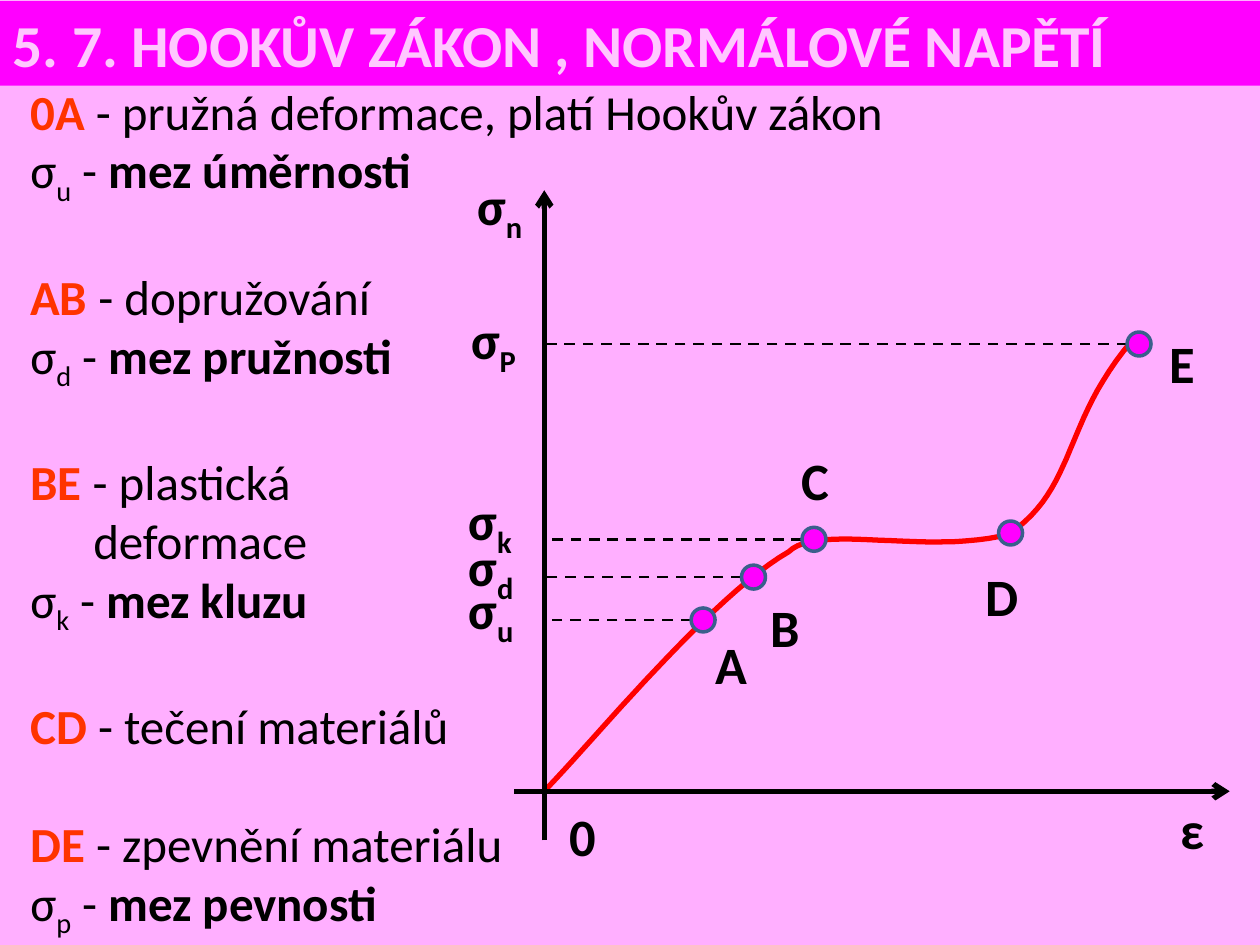
from dataclasses import dataclass

from lxml import etree
from pptx import Presentation
from pptx.dml.color import RGBColor
from pptx.enum.dml import MSO_LINE
from pptx.enum.shapes import MSO_CONNECTOR, MSO_SHAPE
from pptx.enum.text import MSO_ANCHOR, MSO_AUTO_SIZE, PP_ALIGN
from pptx.oxml.ns import qn
from pptx.util import Inches, Pt

STRAIGHT = MSO_CONNECTOR.STRAIGHT
OVAL = MSO_SHAPE.OVAL
DASH = MSO_LINE.DASH
LEFT = PP_ALIGN.LEFT
MIDDLE = MSO_ANCHOR.MIDDLE
NO_FIT = MSO_AUTO_SIZE.NONE


@dataclass(frozen=True)
class Theme:
    font: str = "Calibri"
    background: RGBColor = RGBColor(0xFF, 0xAF, 0xFF)
    accent: RGBColor = RGBColor(0xFF, 0x00, 0xFF)
    title: RGBColor = RGBColor(0xFF, 0xC8, 0xFF)
    key: RGBColor = RGBColor(0xFF, 0x33, 0x00)
    ink: RGBColor = RGBColor(0, 0, 0)
    curve: RGBColor = RGBColor(0xFF, 0, 0)
    outline: RGBColor = RGBColor(0x3A, 0x5F, 0x8C)
    title_size: int = 34
    body_size: int = 28
    label_size: int = 30


@dataclass(frozen=True)
class Phase:
    """One stretch of the curve, with the limit that ends it."""
    key: str
    lines: tuple
    sub: str = ""
    limit: str = ""


@dataclass(frozen=True)
class Label:
    x: float
    y: float
    w: float
    text: str
    sub: str = ""


@dataclass(frozen=True)
class Point:
    x: float
    y: float
    dashed: bool = True


THEME = Theme()
ORIGIN_X, ORIGIN_Y = 4.32, 6.28
MARKER = 0.19
LABEL_H = 0.61
UNITS = 1000  # freeform units per inch

PHASES = [
    Phase("0A", ("pružná deformace, platí Hookův zákon",), "u", "mez úměrnosti"),
    Phase("AB", ("dopružování",), "d", "mez pružnosti"),
    Phase("BE", ("plastická", "deformace"), "k", "mez kluzu"),
    Phase("CD", ("tečení materiálů",)),
    Phase("DE", ("zpevnění materiálu",), "p", "mez pevnosti"),
]
POINTS = [Point(5.58, 4.92), Point(5.98, 4.58), Point(6.46, 4.28),
          Point(8.02, 4.23, dashed=False), Point(9.04, 2.73)]
LABELS = [
    Label(5.58, 4.97, 0.46, "A"), Label(6.02, 4.67, 0.44, "B"),
    Label(6.26, 3.51, 0.42, "C"), Label(7.72, 4.43, 0.47, "D"),
    Label(9.18, 2.58, 0.41, "E"),
    Label(3.62, 4.53, 0.58, "σ", "u"), Label(3.62, 4.19, 0.58, "σ", "d"),
    Label(3.62, 3.82, 0.58, "σ", "k"), Label(3.64, 2.39, 0.58, "σ", "P"),
    Label(3.69, 1.32, 0.58, "σ", "n"),
    Label(9.27, 6.28, 0.39, "ε"), Label(4.42, 6.33, 0.42, "0"),
]
CURVE_START = (ORIGIN_X, ORIGIN_Y)
CURVE = [  # two control points and an end point for each segment
    ((4.69, 5.9), (5.66, 4.72), (6.26, 4.38)),
    ((6.49, 4.15), (7.37, 4.41), (8.01, 4.24)),
    ((8.55, 3.86), (8.43, 3.36), (8.98, 2.71)),
]


def place(s, x: float, y: float, w: float, h: float) -> None:
    s.left, s.top, s.width, s.height = map(Inches, (x, y, w, h))


def style_run(r, size: int, color: RGBColor, bold: bool, sub: bool = False) -> None:
    r.font.name, r.font.size, r.font.bold = THEME.font, Pt(size), bold
    r.font.color.rgb = color
    if sub:
        r.font._element.set("baseline", "-25000")


def add_run(p, text: str, size: int, color: RGBColor = THEME.ink,
            bold: bool = False, sub: bool = False) -> None:
    r = p.add_run()
    r.text = text
    style_run(r, size, color, bold, sub)


def add_title(slide, text: str) -> None:
    s = slide.shapes.title
    place(s, 0, 0.01, 10, 0.67)
    s.fill.solid()
    s.fill.fore_color.rgb = THEME.accent
    tf = s.text_frame
    tf.text = text
    tf.auto_size = NO_FIT
    tf.vertical_anchor = MIDDLE
    p = tf.paragraphs[0]
    p.alignment = LEFT
    style_run(p.runs[0], THEME.title_size, THEME.title, True)


def format_plain(p, tab: float) -> None:
    """Drop the bullet and indent, and set one left tab stop."""
    pPr = p._p.get_or_add_pPr()
    pPr.set("marL", "0")
    pPr.set("indent", "0")
    etree.SubElement(pPr, qn("a:buNone"))
    tabs = etree.SubElement(pPr, qn("a:tabLst"))
    etree.SubElement(tabs, qn("a:tab"), pos=str(Inches(tab)), algn="l")


def add_phases(slide, phases: list[Phase]) -> None:
    s = slide.placeholders[1]
    place(s, 0.14, 0.7, 7.19, 6.7)
    tf = s.text_frame
    tf.auto_size = NO_FIT
    tf.vertical_anchor = MIDDLE
    size = THEME.body_size
    for i, phase in enumerate(phases):
        p = tf.add_paragraph() if i else tf.paragraphs[0]
        p.space_before = Pt(34 if i else 0)
        format_plain(p, 0.71)
        add_run(p, phase.key, size, THEME.key, True)
        add_run(p, " - " + phase.lines[0], size)
        for line in phase.lines[1:]:
            p.add_line_break()
            add_run(p, "\t" + line, size)
        if phase.limit:
            p.add_line_break()
            add_run(p, "σ", size)
            add_run(p, phase.sub, size, sub=True)
            add_run(p, " - ", size)
            add_run(p, phase.limit, size, bold=True)


def add_line(slide, start: tuple, end: tuple, width: float,
             dashed: bool = False, arrow: bool = False) -> None:
    s = slide.shapes.add_connector(STRAIGHT, *map(Inches, start + end))
    s.line.color.rgb = THEME.ink
    s.line.width = Pt(width)
    if dashed:
        s.line.dash_style = DASH
    spPr = s._element.spPr
    if arrow:
        etree.SubElement(spPr.find(qn("a:ln")), qn("a:tailEnd"), type="arrow")
    etree.SubElement(spPr, qn("a:effectLst"))


def bezier(p0: tuple, p1: tuple, p2: tuple, p3: tuple, steps: int = 24) -> list[tuple]:
    """Points on a cubic curve, without its start."""
    ts = [i / steps for i in range(1, steps + 1)]
    return [tuple(UNITS * ((1 - t) ** 3 * a + 3 * (1 - t) ** 2 * t * b
                           + 3 * (1 - t) * t ** 2 * c + t ** 3 * d)
                  for a, b, c, d in zip(p0, p1, p2, p3)) for t in ts]


def add_curve(slide) -> None:
    start = CURVE_START
    fb = slide.shapes.build_freeform(*(UNITS * v for v in start), scale=Inches(1) / UNITS)
    for c1, c2, end in CURVE:
        fb.add_line_segments(bezier(start, c1, c2, end), close=False)
        start = end
    s = fb.convert_to_shape()
    s.shadow.inherit = False
    s.fill.background()
    s.line.color.rgb = THEME.curve
    s.line.width = Pt(3)


def add_marker(slide, point: Point) -> None:
    s = slide.shapes.add_shape(OVAL, 0, 0, 0, 0)
    place(s, point.x - MARKER / 2, point.y - MARKER / 2, MARKER, MARKER)
    s.shadow.inherit = False
    s.fill.solid()
    s.fill.fore_color.rgb = THEME.accent
    s.line.color.rgb = THEME.outline
    s.line.width = Pt(2)


def add_label(slide, label: Label) -> None:
    s = slide.shapes.add_textbox(*map(Inches, (label.x, label.y, label.w, LABEL_H)))
    tf = s.text_frame
    tf.word_wrap = False
    p = tf.paragraphs[0]
    add_run(p, label.text, THEME.label_size, bold=True)
    if label.sub:
        add_run(p, label.sub, THEME.label_size, bold=True, sub=True)


def main() -> None:
    prs = Presentation()
    prs.slide_width, prs.slide_height = Inches(10), Inches(7.5)
    slide = prs.slides.add_slide(prs.slide_layouts[1])
    slide.background.fill.solid()
    slide.background.fill.fore_color.rgb = THEME.background
    add_title(slide, "5. 7. HOOKŮV ZÁKON , NORMÁLOVÉ NAPĚTÍ")
    add_phases(slide, PHASES)
    add_curve(slide)
    add_line(slide, (4.08, ORIGIN_Y), (9.76, ORIGIN_Y), 3, arrow=True)
    add_line(slide, (ORIGIN_X, 6.67), (ORIGIN_X, 1.51), 3, arrow=True)
    for point in POINTS:
        if point.dashed:
            add_line(slide, (point.x - MARKER / 2, point.y), (ORIGIN_X, point.y), 1.5, dashed=True)
        add_marker(slide, point)
    for label in LABELS:
        add_label(slide, label)
    prs.save("out.pptx")


if __name__ == "__main__":
    main()
